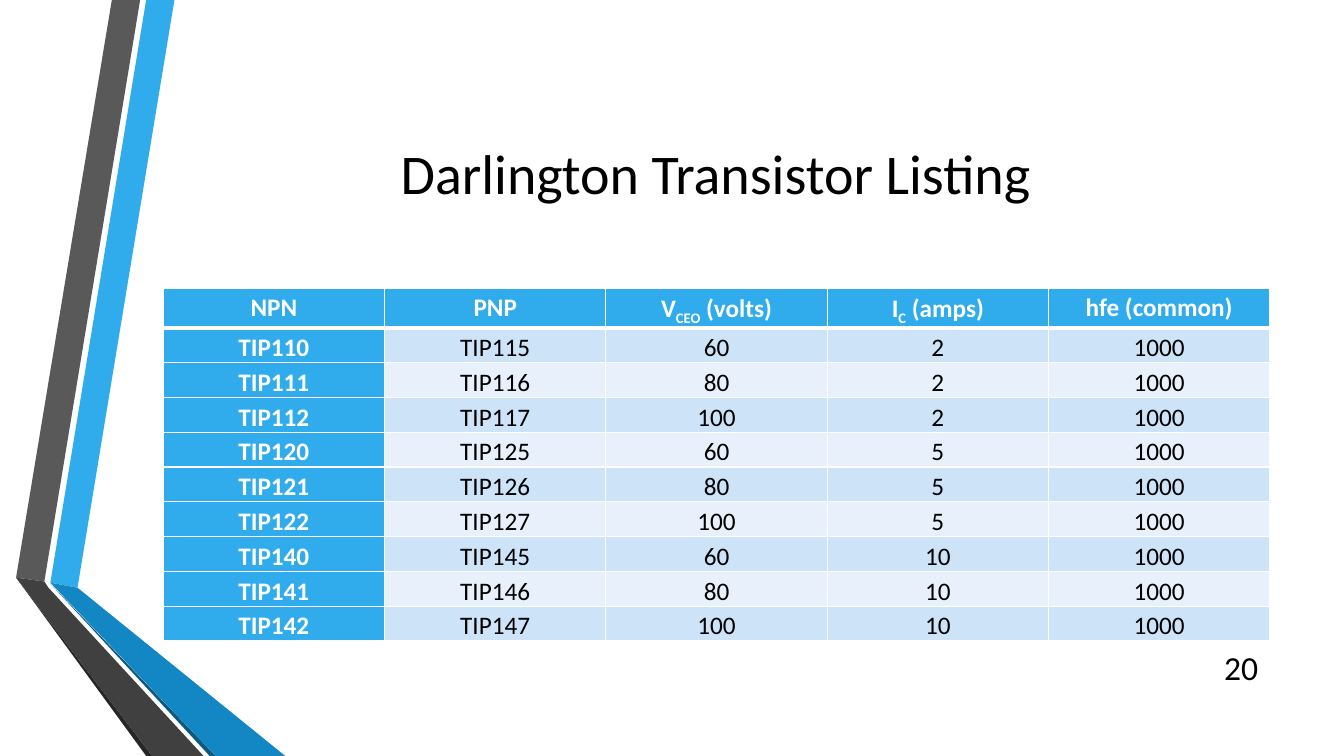
from lxml import etree
from pptx import Presentation
from pptx.dml.color import RGBColor
from pptx.enum.text import MSO_ANCHOR, PP_ALIGN
from pptx.oxml.ns import qn
from pptx.util import Pt

CENTER, RIGHT = PP_ALIGN.CENTER, PP_ALIGN.RIGHT
MIDDLE = MSO_ANCHOR.MIDDLE

WHITE = RGBColor(0xFF, 0xFF, 0xFF)
BLACK = RGBColor(0x00, 0x00, 0x00)
BLUE = RGBColor(0x30, 0xAC, 0xEC)
MID_BLUE = RGBColor(0x12, 0x87, 0xC3)
DARK_BLUE = RGBColor(0x0C, 0x5A, 0x82)
GRAY = RGBColor(0x59, 0x59, 0x59)
DARK_GRAY = RGBColor(0x40, 0x40, 0x40)
SHADE_GRAY = RGBColor(0x26, 0x26, 0x26)
BAND_DARK = RGBColor(0xCD, 0xE3, 0xF8)
BAND_LIGHT = RGBColor(0xE8, 0xF1, 0xFB)

FONT = "Calibri"
ROW_HEIGHT = 24
COL_WIDTH = 158.1
HEADERS = [
    [("NPN", False)],
    [("PNP", False)],
    [("V", False), ("CEO", True), (" (volts)", False)],
    [("I", False), ("C", True), (" (amps)", False)],
    [("hfe (common)", False)],
]
FAMILIES = [(110, 2), (120, 5), (140, 10)]
VOLTS = [60, 80, 100]

RIBBONS = [
    (BLUE, [(36, 416.2), (55.4, 419.8), (124.6, 0), (104.4, 0)]),
    (GRAY, [(100.1, 0), (79.9, 0), (11.5, 412.6), (31.7, 415.4)]),
    (SHADE_GRAY, [(11.5, 412.6), (104.4, 540), (108.7, 540)]),
    (DARK_BLUE, [(36, 416.9), (149.8, 540), (154.1, 540)]),
    (MID_BLUE, [(36, 416.2), (154.1, 540), (203.8, 540), (55.4, 419.8)]),
    (DARK_GRAY, [(145.4, 540), (34.6, 419.8), (31.7, 415.4),
                 (11.5, 412.6), (108.7, 540)]),
]


def place(shape, left, top, width, height):
    box = {"left": left, "top": top, "width": width, "height": height}
    for name, value in box.items():
        setattr(shape, name, Pt(value))


def add_run(p, text, size, color, bold=False, subscript=False):
    r = p.add_run()
    r.text = text
    for name, value in {"name": FONT, "size": Pt(size), "bold": bold}.items():
        setattr(r.font, name, value)
    r.font.color.rgb = color
    if subscript:
        r._r.get_or_add_rPr().set("baseline", "-25000")


def write_line(shape, text, size, align):
    tf = shape.text_frame
    tf.word_wrap = True
    tf.vertical_anchor = MIDDLE
    p = tf.paragraphs[0]
    p.alignment = align
    add_run(p, text, size, BLACK)


def add_ribbon(group, color, points):
    corners = [(Pt(x), Pt(y)) for x, y in points]
    builder = group.shapes.build_freeform(*corners[0])
    builder.add_line_segments(corners[1:], close=True)
    s = builder.convert_to_shape()
    s.shadow.inherit = False
    s.fill.solid()
    s.fill.fore_color.rgb = color
    s.line.fill.background()


def set_borders(cell, widths):
    tc_pr = cell._tc.get_or_add_tcPr()
    for i, (side, width) in enumerate(widths.items()):
        ln = etree.Element(qn(f"a:{side}"), w=str(Pt(width)))
        fill = etree.SubElement(ln, qn("a:solidFill"))
        etree.SubElement(fill, qn("a:srgbClr"), val=str(WHITE))
        tc_pr.insert(i, ln)


def fill_cell(cell, runs, fill, color, bold, top, bottom):
    margins = {"margin_left": 8.64, "margin_right": 8.64,
               "margin_top": 0, "margin_bottom": 0}
    for name, value in margins.items():
        setattr(cell, name, Pt(value))
    cell.fill.solid()
    cell.fill.fore_color.rgb = fill
    set_borders(cell, {"lnL": 1, "lnR": 1, "lnT": top, "lnB": bottom})
    p = cell.text_frame.paragraphs[0]
    p.alignment = CENTER
    p.line_spacing = 1.15
    for text, subscript in runs:
        add_run(p, text, 18, color, bold, subscript)


def transistor_rows():
    for base, amps in FAMILIES:
        for i, volts in enumerate(VOLTS):
            npn = base + i
            values = [f"TIP{npn}", f"TIP{npn + 5}", volts, amps, 1000]
            yield [[(str(value), False)] for value in values]


def add_transistor_table(slide, left, top):
    rows = [HEADERS, *transistor_rows()]
    n_rows, n_cols = len(rows), len(HEADERS)
    frame = slide.shapes.add_table(n_rows, n_cols, Pt(left), Pt(top),
                                   Pt(n_cols * COL_WIDTH),
                                   Pt(n_rows * ROW_HEIGHT))
    table = frame.table
    table.first_col = True
    table.horz_banding = False
    for column in table.columns:
        column.width = Pt(COL_WIDTH)
    for i, row in enumerate(rows):
        table.rows[i].height = Pt(ROW_HEIGHT)
        band = BAND_DARK if i % 2 else BAND_LIGHT
        for j, runs in enumerate(row):
            heading = i == 0 or j == 0
            fill_cell(table.cell(i, j), runs,
                      fill=BLUE if heading else band,
                      color=WHITE if heading else BLACK,
                      bold=heading,
                      top=3 if i == 1 else 1,
                      bottom=3 if i == 0 else 1)


def main():
    prs = Presentation()
    prs.slide_width, prs.slide_height = Pt(960), Pt(540)
    slide = prs.slides.add_slide(prs.slide_layouts[5])

    group = slide.shapes.add_group_shape()
    for color, points in RIBBONS:
        add_ribbon(group, color, points)

    title = slide.shapes.title
    place(title, 116.6, 54, 789.1, 138.2)
    write_line(title, "Darlington Transistor Listing", 40, CENTER)

    number = slide.shapes.add_textbox(Pt(862.6), Pt(462.2), Pt(43.2), Pt(28.8))
    write_line(number, "20", 24, RIGHT)

    add_transistor_table(slide, 116.6, 205.9)
    prs.save("out.pptx")


if __name__ == "__main__":
    main()
